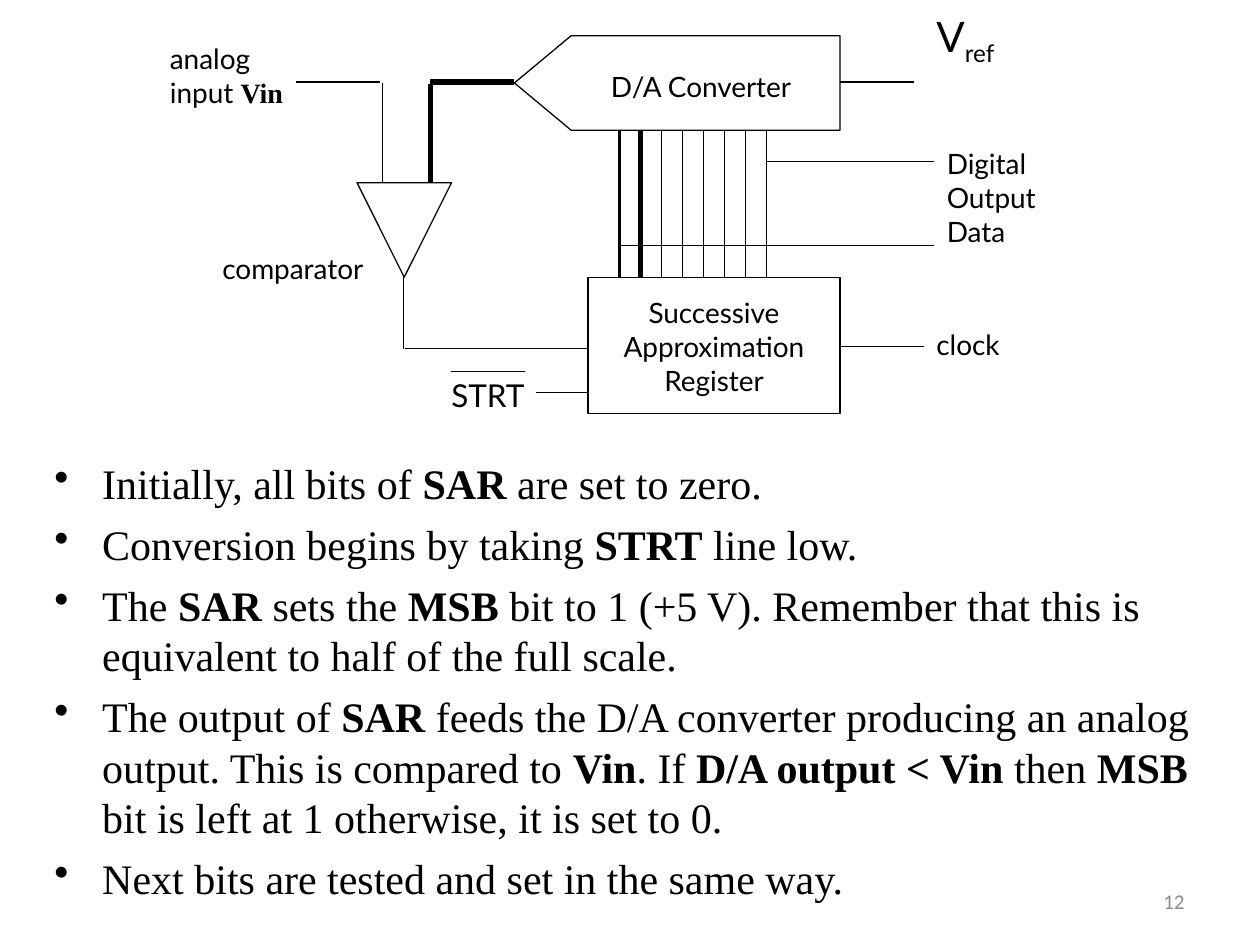
"""Build a slide explaining a successive approximation A/D converter."""
from dataclasses import dataclass

from lxml.etree import SubElement
from pptx import Presentation
from pptx.dml.color import RGBColor
from pptx.enum.shapes import MSO_CONNECTOR as Connector, MSO_SHAPE as Shape
from pptx.enum.text import MSO_ANCHOR as Anchor, PP_ALIGN as Align
from pptx.oxml.ns import qn
from pptx.util import Inches, Pt

COLUMNS, ROWS = 120, 90


@dataclass(frozen=True)
class Theme:
    ink: RGBColor = RGBColor(0, 0, 0)
    muted: RGBColor = RGBColor(0x8C, 0x8C, 0x8C)
    label_font: str = "Lato"
    body_font: str = "Times New Roman"
    number_font: str = "Calibri"
    label: int = 16
    signal: int = 18
    body: int = 24
    number: int = 12
    thin: float = 0.75
    medium: float = 2.25
    thick: float = 3


THEME = Theme()


@dataclass(frozen=True)
class Block:
    kind: Shape
    column: float
    row: float
    width: float
    height: float


@dataclass(frozen=True)
class Wire:
    start: tuple[float, float]
    end: tuple[float, float]
    weight: float = THEME.thin


@dataclass(frozen=True)
class Label:
    text: str
    column: float
    row: float
    width: float
    height: float
    size: int = THEME.label
    font: str = THEME.label_font
    color: RGBColor = THEME.ink
    align: Align = Align.LEFT
    anchor: Anchor = Anchor.TOP


COMPARATOR = Block(Shape.FLOWCHART_MERGE, 34, 17.4, 9, 9)
CONVERTER = Block(Shape.PENTAGON, 49, 3.4, 31, 9)
REGISTER = Block(Shape.RECTANGLE, 56, 26.4, 24, 13)

BUS = [
    Wire((59 + 2 * bit, 12.4), (59 + 2 * bit, 26.4), weight)
    for bit, weight in enumerate([THEME.medium, THEME.thick] + [THEME.thin] * 6)
]
WIRES = BUS + [
    Wire((28.2, 7.8), (36.2, 7.8)),
    Wire((36.4, 7.9), (36.4, 17.4)),
    Wire((49, 7.8), (41, 7.8), THEME.thick),
    Wire((41, 8), (41, 17.4), THEME.thick),
    Wire((80, 7.8), (87, 7.8)),
    Wire((73, 15.4), (89, 15.4)),
    Wire((59, 23.4), (89, 23.4)),
    Wire((80, 33), (88, 33)),
    Wire((38.4, 26.2), (38.4, 33.2)),
    Wire((38.6, 33.2), (56, 33.2)),
    Wire((51, 37.4), (56, 37.4)),
    Wire((43, 35.4), (50, 35.4)),
]

LABELS = [
    Label("Successive Approximation Register", 57, 27.6, 22, 10.8, align=Align.CENTER),
    Label("D/A Converter", 57, 6, 21, 4.4),
    Label("clock", 88, 30.6, 9, 4.4),
    Label("Digital Output Data", 89, 13.4, 11, 10.9),
    Label("comparator", 20, 23.4, 16, 4.4),
    Label("STRT", 41.8, 35.2, 11, 4.8, THEME.signal),
    Label("12", 86, 83.4, 28, 4.8, THEME.number, THEME.number_font,
          THEME.muted, Align.RIGHT, Anchor.MIDDLE),
]
INPUT = Label("analog input **Vin**", 15, 3.4, 15, 7.7)
REFERENCE = Label("V", 88, 0.4, 10, 6, THEME.body)
STEPS = Label("", 4, 43, 114, 45.6, THEME.body, THEME.body_font)

STEP_TEXTS = [
    "Initially, all bits of **SAR **are set to zero.",
    "Conversion begins by taking **STRT** line low.",
    "The **SAR** sets the **MSB** bit to 1 (+5 V). "
    "Remember that this is equivalent to half of the full scale.",
    "The output of **SAR **feeds the D/A converter producing an analog output. "
    "This is compared to **Vin**. If **D/A output < Vin** then **MSB** bit is "
    "left at 1 otherwise, it is set to 0.",
    "Next bits are tested and set in the same way.",
]


def across(columns: float) -> int:
    return Inches(10 * columns / COLUMNS)


def down(rows: float) -> int:
    return Inches(7.5 * rows / ROWS)


def frame(item: Block | Label) -> tuple[int, int, int, int]:
    return across(item.column), down(item.row), across(item.width), down(item.height)


def draw_block(slide, block: Block):
    shape = slide.shapes.add_shape(block.kind, *frame(block))
    shape.shadow.inherit = False
    shape.fill.background()
    shape.line.color.rgb = THEME.ink
    shape.line.width = Pt(THEME.thin)
    return shape


def draw_wire(slide, wire: Wire) -> None:
    (left, top), (right, bottom) = wire.start, wire.end
    connector = slide.shapes.add_connector(
        Connector.STRAIGHT, across(left), down(top), across(right), down(bottom))
    connector.line.color.rgb = THEME.ink
    connector.line.width = Pt(wire.weight)
    SubElement(connector._element.spPr, qn("a:effectLst"))


def write(paragraph, text: str, label: Label) -> None:
    paragraph.alignment = label.align
    paragraph.font.name = label.font
    paragraph.font.size = Pt(label.size)
    paragraph.font.color.rgb = label.color
    for position, part in enumerate(text.split("**")):
        if part:
            run = paragraph.add_run()
            run.text = part
            if position % 2:
                run.font.bold = True
                run.font.name = THEME.body_font


def draw_label(slide, label: Label):
    text_frame = slide.shapes.add_textbox(*frame(label)).text_frame
    text_frame.word_wrap = True
    text_frame.vertical_anchor = label.anchor
    write(text_frame.paragraphs[0], label.text, label)
    return text_frame


def draw_steps(slide, label: Label, texts: list[str]) -> None:
    text_frame = draw_label(slide, label)
    for position, text in enumerate(texts):
        paragraph = text_frame.add_paragraph() if position else text_frame.paragraphs[0]
        write(paragraph, text, label)
        paragraph.space_before = paragraph.space_after = Pt(3)
        properties = paragraph._p.get_or_add_pPr()
        properties.set("marL", str(Inches(0.38)))
        properties.set("indent", str(-Inches(0.38)))
        bullet = properties.makeelement(qn("a:buChar"), {"char": "•"})
        properties.find(qn("a:defRPr")).addprevious(bullet)


def main() -> None:
    presentation = Presentation()
    presentation.slide_width, presentation.slide_height = Inches(10), Inches(7.5)
    slide = presentation.slides.add_slide(presentation.slide_layouts[6])
    draw_block(slide, COMPARATOR)
    converter = draw_block(slide, CONVERTER)
    converter.adjustments[0] = 0.6
    converter._element.spPr.xfrm.set("flipH", "1")
    draw_block(slide, REGISTER)
    for wire in WIRES:
        draw_wire(slide, wire)
    for label in [*LABELS, INPUT]:
        draw_label(slide, label)
    subscript = draw_label(slide, REFERENCE).paragraphs[0].add_run()
    subscript.text = "ref"
    subscript.font._element.set("baseline", "-25000")
    draw_steps(slide, STEPS, STEP_TEXTS)
    presentation.save("out.pptx")


if __name__ == "__main__":
    main()
